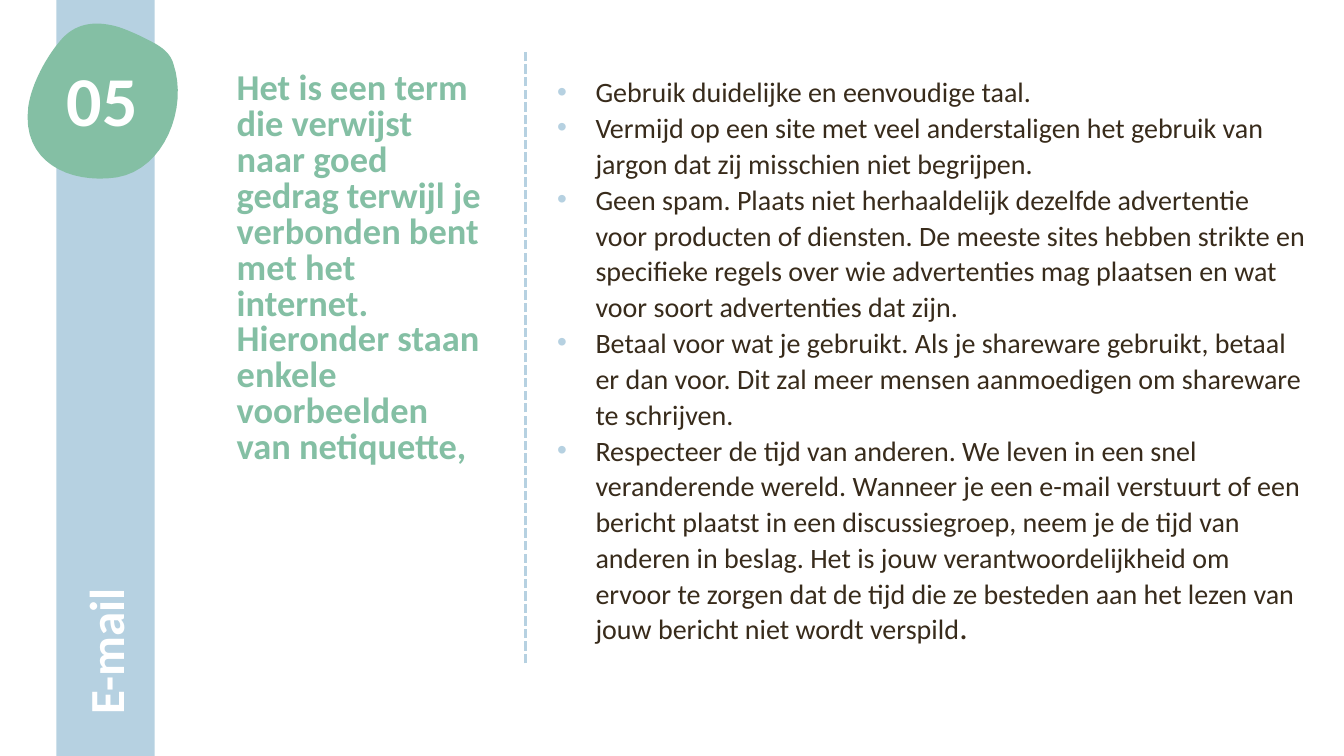
"""Builds the netiquette slide about e-mail."""
import pptx
import pptx.util
import pptx.dml.color
import pptx.enum.dml
import pptx.enum.shapes
import pptx.enum.text
import pptx.oxml
import pptx.oxml.ns

Pt = pptx.util.Pt
ALIGN = pptx.enum.text.PP_ALIGN
ANCHOR = pptx.enum.text.MSO_ANCHOR
AUTO = pptx.enum.text.MSO_AUTO_SIZE
COLORS = {"blue": "B6D1E1", "green": "84BFA4", "brown": "382B1B", "white": "FFFFFF"}
NS = pptx.oxml.ns.nsdecls("a")


def fill_shape(sp, color):
    sp.shadow.inherit = False
    sp.fill.solid()
    sp.fill.fore_color.rgb = pptx.dml.color.RGBColor.from_string(COLORS[color])
    sp.line.fill.background()


def style_runs(p, size, color, bold=False):
    for r in p.runs:
        r.font.name = "Calibri"
        r.font.size = Pt(size)
        r.font.bold = bold
        r.font.color.rgb = pptx.dml.color.RGBColor.from_string(COLORS[color])


prs = pptx.Presentation()
prs.slide_width, prs.slide_height = Pt(960), Pt(540)
s = prs.slides.add_slide(prs.slide_layouts[5])

title = s.shapes.title
title.left, title.top, title.width, title.height = Pt(-226.8), Pt(189.4), Pt(604.8), Pt(51.1)
title.rotation = 270
tf = title.text_frame
tf.text = "E-mail"
tf.auto_size = AUTO.NONE
tf.vertical_anchor = ANCHOR.MIDDLE
p = tf.paragraphs[0]
p.alignment = ALIGN.LEFT
p.line_spacing = Pt(40.2)
style_runs(p, 35, "white", True)

band = s.shapes.add_shape(pptx.enum.shapes.MSO_SHAPE.RECTANGLE, Pt(40.3), 0, Pt(70.2), Pt(540))
fill_shape(band, "blue")
title.element.addprevious(band.element)

start = (85, 19.4)
curves = [
    [(70.6, 15.1), (55.4, 15.1), (43.9, 28.1)],
    [(33.1, 40.3), (22.3, 60.5), (20.2, 76.3)],
    [(15.1, 115.2), (49, 131.8), (83.5, 126.7)],
    [(117.4, 121), (134.6, 77), (123.8, 45.4)],
    [(121, 36), (112.3, 31.7), (103.7, 27.4)],
    [(97.9, 24.5), (91.4, 21.6), (85, 19.4)],
]
STEPS = 16
outline = []
a = start
for b, c, d in curves:
    for i in range(1, STEPS + 1):
        t = i / STEPS
        u = 1 - t
        outline.append([
            Pt(u**3 * a[k] + 3 * u * u * t * b[k] + 3 * u * t * t * c[k] + t**3 * d[k])
            for k in (0, 1)
        ])
    a = d
builder = s.shapes.build_freeform(Pt(start[0]), Pt(start[1]))
builder.add_line_segments(outline, close=True)
blob = builder.convert_to_shape()
fill_shape(blob, "green")

tf = s.shapes.add_textbox(Pt(12.2), Pt(43.9), Pt(121.7), Pt(67.7)).text_frame
tf.word_wrap = True
tf.text = "05"
p = tf.paragraphs[0]
p.alignment = ALIGN.CENTER
p.line_spacing = 0.9
style_runs(p, 50, "white", True)

tf = s.shapes.add_textbox(Pt(160.6), Pt(48.2), Pt(195.8), Pt(244.1)).text_frame
tf.word_wrap = True
tf.auto_size = AUTO.SHAPE_TO_FIT_TEXT
tf.text = ("Het is een term die verwijst naar goed gedrag terwijl je verbonden bent met het "
           "internet. Hieronder staan enkele voorbeelden van netiquette,")
p = tf.paragraphs[0]
p.line_spacing = Pt(25.6)
p._p.get_or_add_pPr().set("marL", str(Pt(1.4)))
style_runs(p, 26, "green", True)

rules = [
    "Gebruik duidelijke en eenvoudige taal.",
    "Vermijd op een site met veel anderstaligen het gebruik van jargon dat zij misschien "
    "niet begrijpen.",
    "Geen spam. Plaats niet herhaaldelijk dezelfde advertentie voor producten of diensten. "
    "De meeste sites hebben strikte en specifieke regels over wie advertenties mag plaatsen "
    "en wat voor soort advertenties dat zijn.",
    "Betaal voor wat je gebruikt. Als je shareware gebruikt, betaal er dan voor. Dit zal meer "
    "mensen aanmoedigen om shareware te schrijven.",
    "Respecteer de tijd van anderen. We leven in een snel veranderende wereld. Wanneer je een "
    "e-mail verstuurt of een bericht plaatst in een discussiegroep, neem je de tijd van "
    "anderen in beslag. Het is jouw verantwoordelijkheid om ervoor te zorgen dat de tijd die "
    "ze besteden aan het lezen van jouw bericht niet wordt verspild",
]
tf = s.shapes.add_textbox(Pt(390.2), Pt(48.2), Pt(550.8), Pt(396.7)).text_frame
tf.word_wrap = True
for i, rule in enumerate(rules):
    p = tf.add_paragraph() if i else tf.paragraphs[0]
    p.text = rule
    p.line_spacing = Pt(25.6)
    pPr = p._p.get_or_add_pPr()
    pPr.set("marL", str(Pt(28.1)))
    pPr.set("indent", str(Pt(-27.4)))
    for xml in (
        f'<a:buClr {NS}><a:srgbClr val="{COLORS["blue"]}"/></a:buClr>',
        f'<a:buFont {NS} typeface="Arial"/>',
        f'<a:buChar {NS} char="•"/>',
    ):
        pPr.append(pptx.oxml.parse_xml(xml))
    style_runs(p, 20, "brown")
r = p.add_run()
r.text = "."
style_runs(p, 20, "brown")
r.font.size = Pt(24)

divider = s.shapes.add_connector(
    pptx.enum.shapes.MSO_CONNECTOR.STRAIGHT, Pt(375.1), Pt(473.8), Pt(375.1), Pt(36))
divider.line.color.rgb = pptx.dml.color.RGBColor.from_string(COLORS["blue"])
divider.line.width = Pt(2.25)
divider.line.dash_style = pptx.enum.dml.MSO_LINE.SQUARE_DOT
divider.element.spPr.append(pptx.oxml.parse_xml(f"<a:effectLst {NS}/>"))

prs.save("out.pptx")
